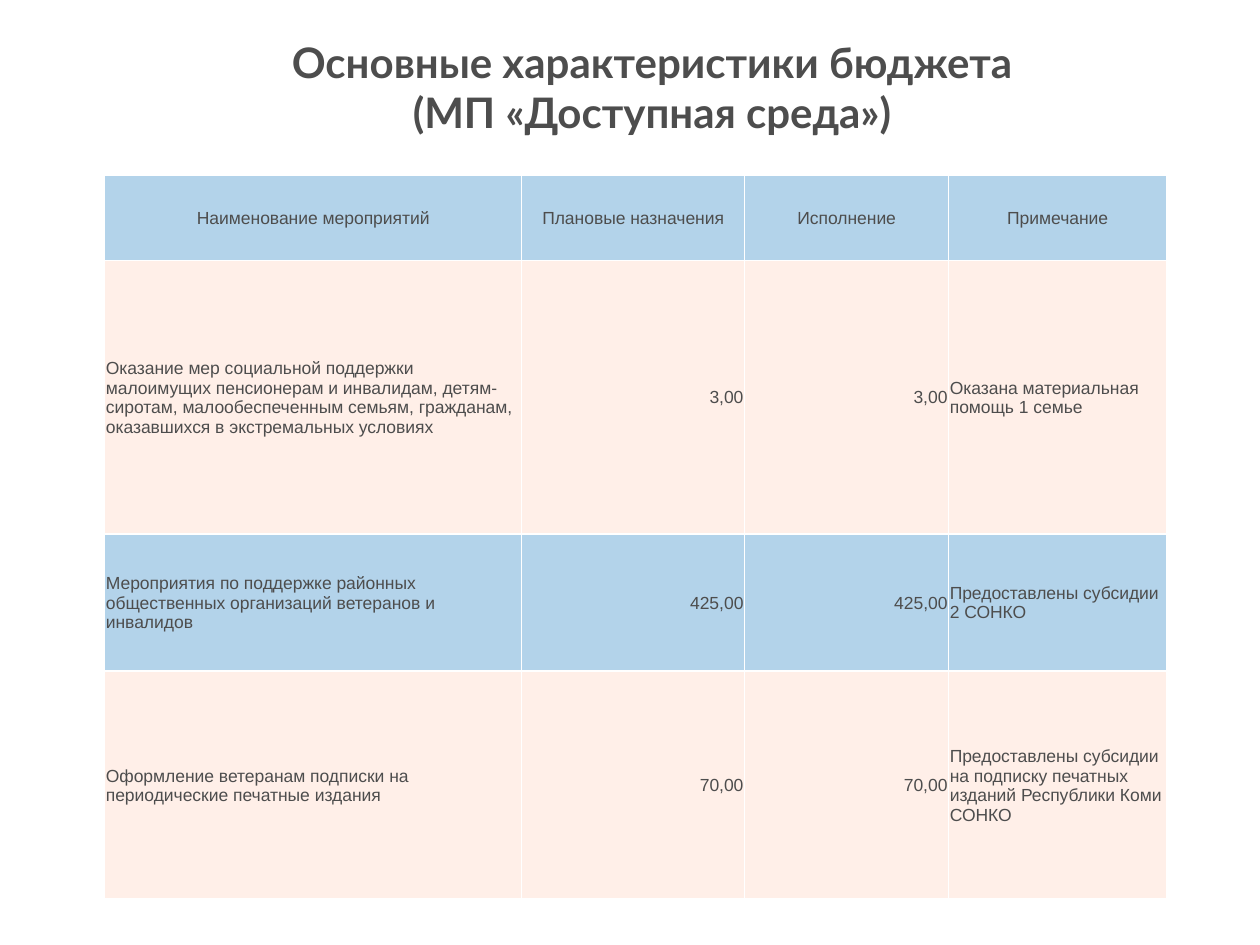
"""Build a slide with a budget table for one programme."""
from lxml.etree import SubElement
from pptx import Presentation
from pptx.dml.color import RGBColor
from pptx.enum.text import MSO_ANCHOR, MSO_AUTO_SIZE, PP_ALIGN
from pptx.oxml.ns import qn
from pptx.util import Pt

HUES = {"text": "4D4D4D", "blue": "B3D3EA", "rose": "FFEFE8", "rule": "FFFFFF"}
TITLE = "Основные характеристики бюджета\v(МП «Доступная среда»)"
WIDTHS = (238.3, 127.4, 116.6, 124.6)
HEIGHTS = (48.5, 156.2, 78.5, 130.3)
ALIGNS = (PP_ALIGN.LEFT, PP_ALIGN.RIGHT, PP_ALIGN.RIGHT, PP_ALIGN.LEFT)
ROWS = (
    ("Наименование мероприятий", "Плановые назначения", "Исполнение", "Примечание"),
    ("Оказание мер социальной поддержки малоимущих пенсионерам и инвалидам, "
     "детям-сиротам, малообеспеченным семьям, гражданам, оказавшихся в "
     "экстремальных условиях",
     "3,00", "3,00", "Оказана материальная помощь 1 семье"),
    ("Мероприятия по поддержке районных общественных организаций ветеранов и инвалидов",
     "425,00", "425,00", "Предоставлены субсидии 2 СОНКО"),
    ("Оформление ветеранам подписки на периодические печатные издания",
     "70,00", "70,00",
     "Предоставлены субсидии на подписку печатных изданий Республики Коми СОНКО"),
)


def style(para, face, size, bold, align):
    para.alignment = align
    font = para.font
    font.name, font.size, font.bold = face, Pt(size), bold
    font.color.rgb = RGBColor.from_string(HUES["text"])


def add_title(slide):
    title = slide.shapes.title
    title.left, title.top = Pt(93.6), Pt(20.6)
    title.width, title.height = Pt(558), Pt(57.6)
    frame = title.text_frame
    frame.text = TITLE
    frame.word_wrap = True
    frame.auto_size = MSO_AUTO_SIZE.NONE
    frame.vertical_anchor = MSO_ANCHOR.MIDDLE
    frame.margin_top = frame.margin_bottom = 0
    style(frame.paragraphs[0], "Lato", 24, True, PP_ALIGN.CENTER)


def add_rules(cell):
    props = cell._tc.get_or_add_tcPr()
    for side in ("a:lnL", "a:lnR", "a:lnT", "a:lnB"):
        line = SubElement(props, qn(side), w=str(Pt(1)))
        fill = SubElement(line, qn("a:solidFill"))
        SubElement(fill, qn("a:srgbClr"), val=HUES["rule"])


def fill_cell(cell, text, hue, align):
    cell.text = text
    cell.vertical_anchor = MSO_ANCHOR.MIDDLE
    cell.margin_left = cell.margin_right = cell.margin_top = Pt(0.7)
    cell.margin_bottom = 0
    add_rules(cell)
    cell.fill.solid()
    cell.fill.fore_color.rgb = RGBColor.from_string(HUES[hue])
    style(cell.text_frame.paragraphs[0], "Arial", 10, False, align)


def add_grid(slide):
    frame = slide.shapes.add_table(
        len(ROWS), len(WIDTHS), Pt(59.8), Pt(100.4), Pt(sum(WIDTHS)), Pt(sum(HEIGHTS)))
    table = frame.table
    table.first_row = table.horz_banding = False
    for col, width in zip(table.columns, WIDTHS):
        col.width = Pt(width)
    for i, (row, height) in enumerate(zip(ROWS, HEIGHTS)):
        table.rows[i].height = Pt(height)
        hue = "rose" if i % 2 else "blue"
        for j, text in enumerate(row):
            align = ALIGNS[j] if i else PP_ALIGN.CENTER
            fill_cell(table.cell(i, j), text, hue, align)


def main():
    deck = Presentation()
    deck.slide_width, deck.slide_height = Pt(720), Pt(540)
    slide = deck.slides.add_slide(deck.slide_layouts[5])
    add_title(slide)
    add_grid(slide)
    deck.save("out.pptx")


if __name__ == "__main__":
    main()
